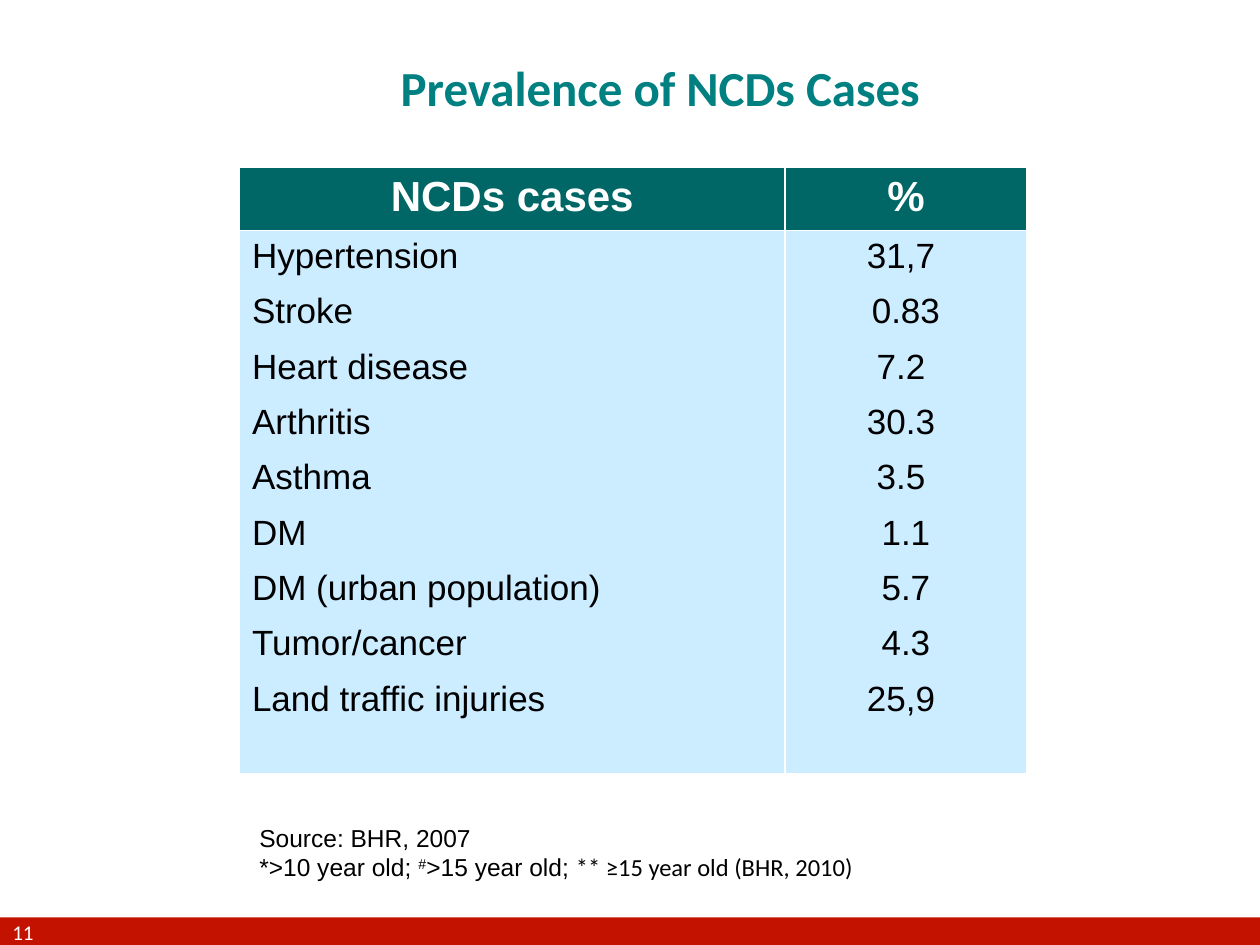
import pptx
import pptx.dml.color
import pptx.enum.shapes
import pptx.enum.text
import pptx.oxml.ns
import pptx.util
from dataclasses import dataclass
from lxml import etree

Inches, Pt = pptx.util.Inches, pptx.util.Pt
Align, Anchor = pptx.enum.text.PP_ALIGN, pptx.enum.text.MSO_ANCHOR
qn = pptx.oxml.ns.qn


@dataclass(frozen=True)
class Theme:
    title: str = "008080"
    head: str = "006666"
    body: str = "CCECFF"
    bar: str = "C41200"
    white: str = "FFFFFF"
    black: str = "000000"
    sans: str = "Arial"
    alt: str = "Calibri"
    title_size: int = 28
    head_size: int = 24
    body_size: int = 20
    note_size: int = 14
    page_size: int = 12
    gap: float = 9.3


THEME = Theme()
CASES = [
    ("Hypertension", "31,7 "),
    ("Stroke", "0.83"),
    ("Heart disease", "7.2 "),
    ("Arthritis", "30.3 "),
    ("Asthma", "3.5 "),
    ("DM", "1.1"),
    ("DM (urban population)", "5.7"),
    ("Tumor/cancer", "4.3"),
    ("Land traffic injuries", "25,9 "),
]


def rgb(code):
    return pptx.dml.color.RGBColor.from_string(code)


def style(font, name, size, color, bold=False):
    font.name, font.size, font.bold = name, Pt(size), bold
    font.color.rgb = rgb(color)


def add_box(slide, left, top, width, height):
    box = slide.shapes.add_textbox(
        Inches(left), Inches(top), Inches(width), Inches(height))
    box.text_frame.word_wrap = True
    return box.text_frame


def add_title(slide, left, top, width, height):
    title = slide.shapes.title
    title.left, title.top = Inches(left), Inches(top)
    title.width, title.height = Inches(width), Inches(height)
    frame = title.text_frame
    frame.text = "Prevalence of NCDs Cases"
    frame.auto_size = pptx.enum.text.MSO_AUTO_SIZE.NONE
    frame.vertical_anchor = Anchor.MIDDLE
    para = frame.paragraphs[0]
    para.alignment, para.line_spacing = Align.CENTER, 0.8
    style(para.font, THEME.alt, THEME.title_size, THEME.title, True)


def add_edges(cell):
    props = cell._tc.get_or_add_tcPr()
    for side in ("lnL", "lnR", "lnT", "lnB"):
        line = etree.SubElement(props, qn("a:" + side), w=str(Pt(1)))
        fill = etree.SubElement(line, qn("a:solidFill"))
        etree.SubElement(fill, qn("a:srgbClr"), val=THEME.white)


def fill_cell(cell, lines, align, size, color, back, bold=False):
    add_edges(cell)
    cell.fill.solid()
    cell.fill.fore_color.rgb = rgb(back)
    cell.text = "\n".join(lines)
    for i, para in enumerate(cell.text_frame.paragraphs):
        para.alignment = align
        para.space_before = Pt(THEME.gap if i else 0)
        style(para.font, THEME.sans, size, color, bold)


def add_cases(slide, left, top, widths, heights):
    table = slide.shapes.add_table(
        len(heights), len(widths), Inches(left), Inches(top),
        Inches(sum(widths)), Inches(sum(heights))).table
    for row, height in zip(table.rows, heights):
        row.height = Inches(height)
    heads, aligns = ("NCDs cases", "%"), (Align.LEFT, Align.CENTER)
    # Each column holds a header cell and one cell listing all its values
    for i, values in enumerate(zip(*CASES)):
        table.columns[i].width = Inches(widths[i])
        fill_cell(table.cell(0, i), [heads[i]], Align.CENTER,
                  THEME.head_size, THEME.white, THEME.head, True)
        fill_cell(table.cell(1, i), values, aligns[i],
                  THEME.body_size, THEME.black, THEME.body)


def add_note(slide, left, top, width, height):
    frame = add_box(slide, left, top, width, height)
    frame.vertical_anchor = Anchor.MIDDLE
    frame.text = "Source: BHR, 2007"
    para = frame.add_paragraph()
    for text in ("*>10 year old; ", "#", ">15 year old; ",
                 "** ≥15 year old (BHR, 2010)"):
        run = para.add_run()
        run.text = text
        if text == "#":
            run._r.get_or_add_rPr().set("baseline", "30000")
    run.font.name = THEME.alt
    for para in frame.paragraphs:
        style(para.font, THEME.sans, THEME.note_size, THEME.black)


def add_footer(slide, left, top, width, height):
    bar = slide.shapes.add_shape(
        pptx.enum.shapes.MSO_SHAPE.RECTANGLE,
        Inches(left), Inches(top), Inches(width), Inches(height))
    bar.shadow.inherit = False
    bar.fill.solid()
    bar.fill.fore_color.rgb = rgb(THEME.bar)
    bar.line.fill.background()
    # Page number
    frame = add_box(slide, left, top - 0.03, 0.5, 0.3)
    frame.text = "11"
    style(frame.paragraphs[0].font, THEME.alt, THEME.page_size, THEME.white)


def main():
    deck = pptx.Presentation()
    deck.slide_width, deck.slide_height = Inches(10), Inches(7.5)
    slide = deck.slides.add_slide(deck.slide_layouts[5])
    add_footer(slide, 0, 7.28, 10, 0.22)
    add_note(slide, 1.96, 6.48, 5, 0.57)
    add_cases(slide, 1.9, 1.33, (4.33, 1.92), (0.49, 4.31))
    add_title(slide, 0.75, 0, 8.98, 1.47)
    deck.save("out.pptx")


if __name__ == "__main__":
    main()
